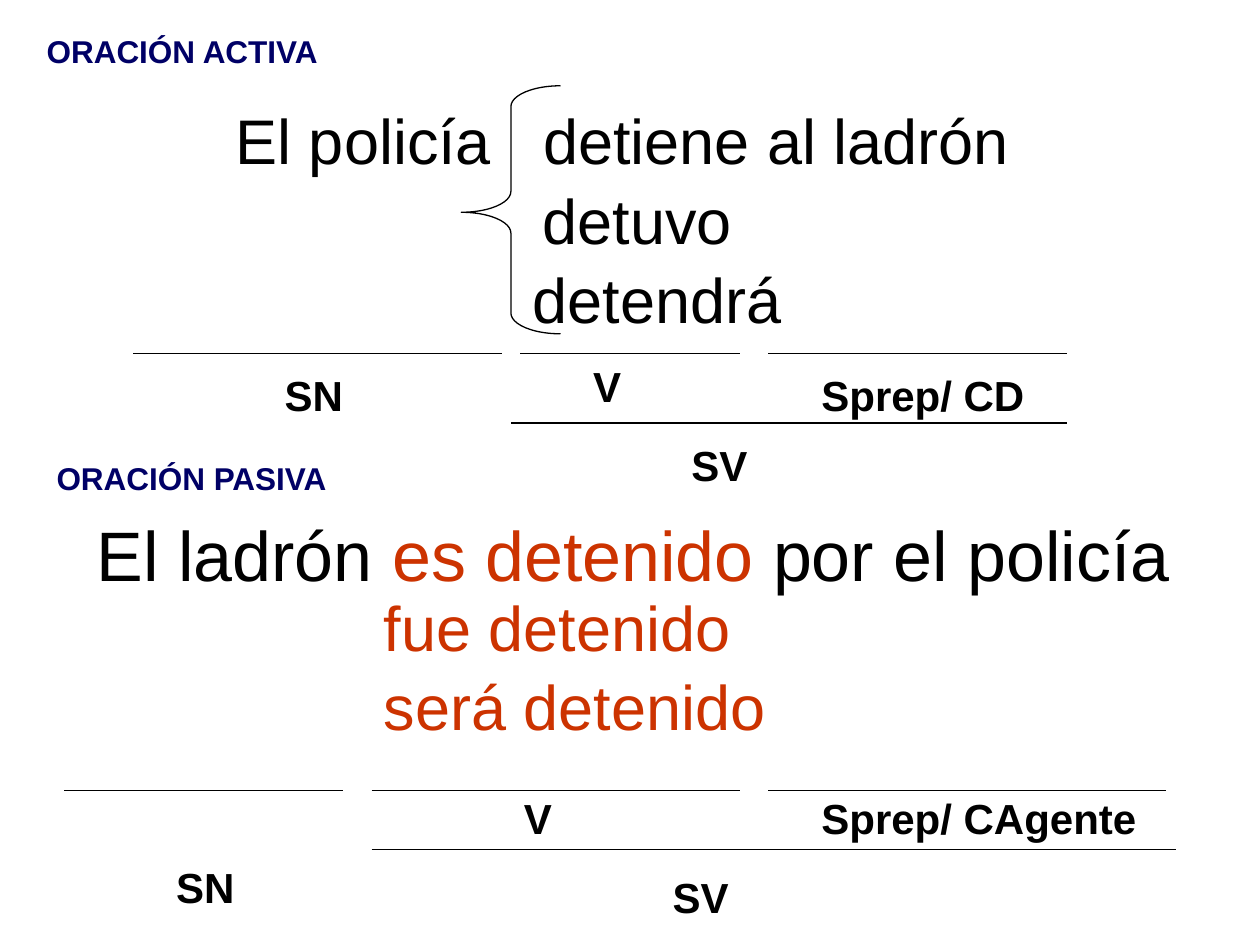
from lxml import etree
from pptx import Presentation
from pptx.dml.color import RGBColor
from pptx.enum.shapes import MSO_CONNECTOR, MSO_SHAPE
from pptx.enum.text import MSO_AUTO_SIZE
from pptx.oxml.ns import qn
from pptx.util import Cm, Pt

LINE = MSO_CONNECTOR.STRAIGHT
BRACE = MSO_SHAPE.LEFT_BRACE
GROW = MSO_AUTO_SIZE.SHAPE_TO_FIT_TEXT

HUES = {"ink": "000000", "head": "000066", "verb": "CC3300"}
STYLES = {
    "main": {"size": Pt(40), "bold": False},
    "form": {"size": Pt(36), "bold": False},
    "head": {"size": Pt(18), "bold": True},
    "tag": {"size": Pt(24), "bold": True},
}
TALL = {"main": 1.96, "form": 1.78, "head": 1.02, "tag": 1.27}

TEXTS = [
    ("main", 1.7, 10.19, 22.4, [("El ladrón ", "ink"), ("es detenido", "verb"),
                                (" por el policía", "ink")]),
    ("head", 0.69, 0.53, 7.6, [("ORACIÓN ACTIVA", "head")]),
    ("head", 0.89, 9.12, 7.6, [("ORACIÓN PASIVA", "head")]),
    ("form", 4.5, 1.93, 18.8, [("El policía\tdetiene al ladrón", "ink")]),
    ("form", 10.69, 3.53, 6, [("detuvo", "ink")]),
    ("form", 10.49, 5.13, 6, [("detendrá", "ink")]),
    ("form", 7.49, 11.73, 8, [("fue detenido", "verb")]),
    ("form", 7.49, 13.34, 9.2, [("será detenido", "verb")]),
    ("tag", 5.49, 7.32, 1.8, [("SN", "ink")]),
    ("tag", 11.71, 7.14, 1.4, [("V", "ink")]),
    ("tag", 16.31, 7.32, 5, [("Sprep/ CD", "ink")]),
    ("tag", 13.69, 8.74, 1.8, [("SV", "ink")]),
    ("tag", 3.3, 17.25, 1.8, [("SN", "ink")]),
    ("tag", 10.31, 15.85, 1.4, [("V", "ink")]),
    ("tag", 16.31, 15.85, 7.01, [("Sprep/ CAgente", "ink")]),
    ("tag", 13.31, 17.45, 1.8, [("SV", "ink")]),
]
TAB = 6.2
RULES = {
    7.13: [(2.69, 10.11), (10.49, 14.91), (15.49, 21.51)],
    8.53: [(10.31, 21.51)],
    15.93: [(1.3, 6.91), (7.49, 14.91), (15.49, 23.5)],
    17.12: [(7.49, 23.7)],
}


def tint(hue):
    return RGBColor.from_string(HUES[hue])


def write(style, left, top, wide, runs):
    box = slide.shapes.add_textbox(Cm(left), Cm(top), Cm(wide), Cm(TALL[style]))
    frame = box.text_frame
    frame.word_wrap = True
    frame.auto_size = GROW
    para = frame.paragraphs[0]
    for text, hue in runs:
        run = para.add_run()
        run.text = text
        run.font.color.rgb = tint(hue)
        for key, value in {"name": "Arial", **STYLES[style]}.items():
            setattr(run.font, key, value)
        if "\t" in text:
            stops = etree.SubElement(para._p.get_or_add_pPr(), qn("a:tabLst"))
            etree.SubElement(stops, qn("a:tab"), pos=str(Cm(TAB)), algn="l")


def ink(shape):
    shape.line.color.rgb = tint("ink")
    shape.line.width = Pt(0.75)


deck = Presentation()
deck.slide_width, deck.slide_height = Cm(25.4), Cm(19.05)
slide = deck.slides.add_slide(deck.slide_layouts[6])

for item in TEXTS:
    write(*item)

for y, spans in RULES.items():
    for start, end in spans:
        rule = slide.shapes.add_connector(LINE, Cm(start), Cm(y), Cm(end), Cm(y))
        ink(rule)
        etree.SubElement(rule._element.spPr, qn("a:effectLst"))

brace = slide.shapes.add_shape(BRACE, Cm(9.3), Cm(1.73), Cm(2), Cm(5))
brace.shadow.inherit = False
brace.fill.background()
ink(brace)
for k, value in enumerate((0.21, 0.51)):
    brace.adjustments[k] = value

deck.save("out.pptx")
